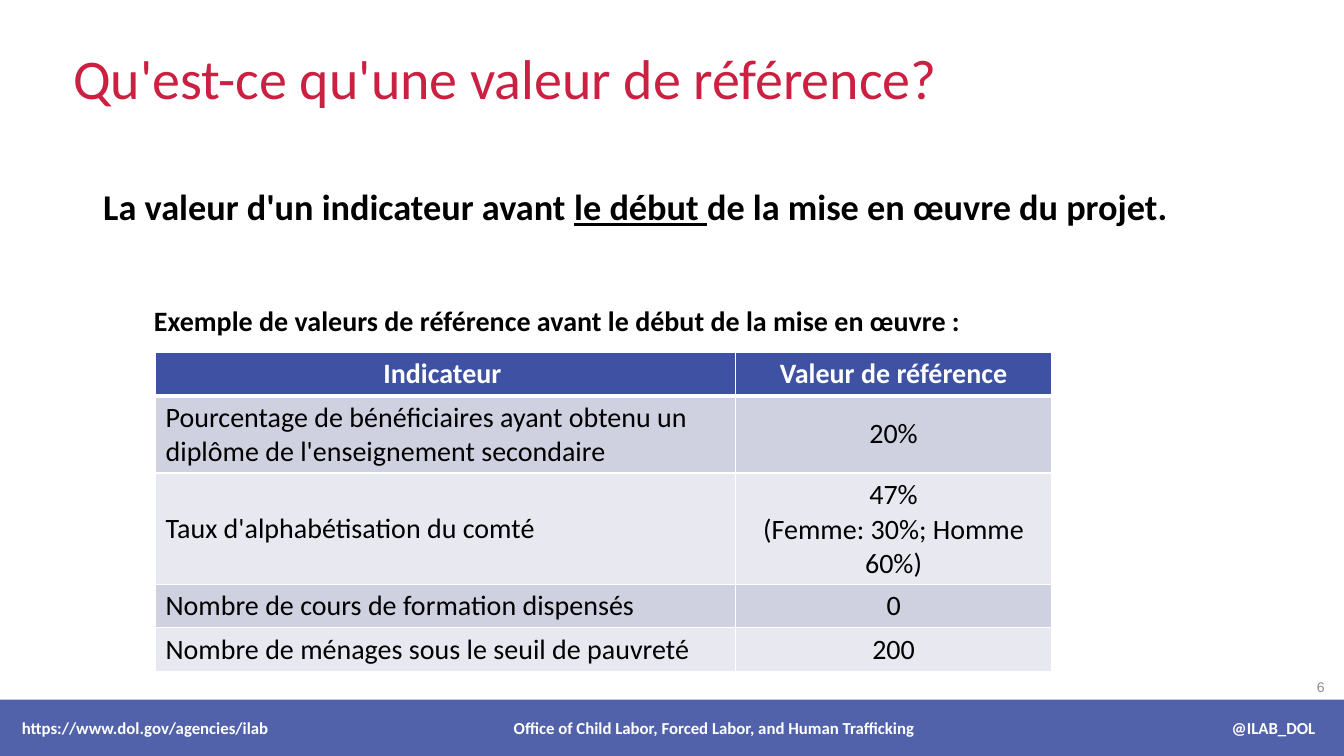
from lxml.etree import SubElement
from pptx import Presentation
from pptx.dml.color import RGBColor
from pptx.enum.shapes import MSO_SHAPE
from pptx.enum.text import MSO_ANCHOR, PP_ALIGN
from pptx.oxml import parse_xml
from pptx.oxml.ns import nsdecls, qn
from pptx.util import Cm, Pt

COLOURS = {
    "title": "CB2042", "text": "000000", "white": "FFFFFF", "blue": "3F51A2",
    "band_dark": "CFD0E0", "band_light": "E8E9F0", "number": "8C8C8C",
}
TITLE = "Qu'est-ce qu'une valeur de référence?"
# (text, underlined)
DEFINITION = [
    ("La valeur d'un indicateur avant ", False),
    ("le début ", True),
    ("de la mise en œuvre du projet.", False),
]
CAPTION = "Exemple de valeurs de référence avant le début de la mise en œuvre :"
PAGE_NUMBER = "6"
TABLE_ROWS = [
    ("Indicateur ", "Valeur de référence"),
    ("Pourcentage de bénéficiaires ayant obtenu un diplôme de l'enseignement secondaire", "20%"),
    ("Taux d'alphabétisation du comté", "47%\n(Femme: 30%; Homme 60%)"),
    ("Nombre de cours de formation dispensés", "0"),
    ("Nombre de ménages sous le seuil de pauvreté", "200"),
]
COLUMN_WIDTHS = (14.62, 7.96)
ROW_HEIGHTS = (1.1, 1.93, 2.8, 1.1, 1.1)
FOOTER_TOP, FOOTER_HEIGHT = 17.63, 1.42
# (text, left, width, alignment)
FOOTER = [
    ("https://www.dol.gov/agencies/ilab", 0.3, 8, PP_ALIGN.LEFT),
    ("Office of Child Labor, Forced Labor, and Human Trafficking", 11.5, 13, PP_ALIGN.CENTER),
    ("@ILAB_DOL", 28.4, 5, PP_ALIGN.RIGHT),
]


def colour(name):
    return RGBColor.from_string(COLOURS[name])


def style(frame, size, shade, bold=False, align=None, font="Calibri"):
    for para in frame.paragraphs:
        para.alignment = align
        for span in para.runs:
            span.font.name = font
            span.font.size = Pt(size)
            span.font.bold = bold
            span.font.color.rgb = colour(shade)


def add_text(page, area, text, anchor=MSO_ANCHOR.TOP, **look):
    """Area is left, top, width, height in centimetres."""
    frame = page.shapes.add_textbox(*map(Cm, area)).text_frame
    frame.word_wrap = True
    frame.vertical_anchor = anchor
    frame.text = text
    style(frame, **look)
    return frame


def add_definition(page):
    frame = add_text(page, (1.32, 4.65, 29.39, 2.16), "", size=25.9, shade="text")
    para = frame.paragraphs[0]
    para.line_spacing = 0.9
    for text, underlined in DEFINITION:
        span = para.add_run()
        span.text = text
        span.font.underline = underlined
    style(frame, 25.9, "text", bold=True, align=PP_ALIGN.CENTER)


def set_borders(cell, is_header):
    properties = cell._tc.get_or_add_tcPr()
    for position, side in enumerate("LRTB"):
        points = 3 if is_header and side == "B" else 1
        line = parse_xml(
            f'<a:ln{side} {nsdecls("a")} w="{Pt(points)}"><a:solidFill>'
            f'<a:srgbClr val="{COLOURS["white"]}"/></a:solidFill></a:ln{side}>')
        properties.insert(position, line)


def add_baseline_table(page):
    table = page.shapes.add_table(
        len(TABLE_ROWS), len(COLUMN_WIDTHS), Cm(3.92), Cm(8.87),
        Cm(sum(COLUMN_WIDTHS)), Cm(sum(ROW_HEIGHTS))).table
    for column, width in zip(table.columns, COLUMN_WIDTHS):
        column.width = Cm(width)
    for row_index, texts in enumerate(TABLE_ROWS):
        table.rows[row_index].height = Cm(ROW_HEIGHTS[row_index])
        is_header = row_index == 0
        band = "band_dark" if row_index % 2 else "band_light"
        for column_index, text in enumerate(texts):
            cell = table.cell(row_index, column_index)
            cell.text_frame.text = text
            cell.vertical_anchor = MSO_ANCHOR.TOP if is_header else MSO_ANCHOR.MIDDLE
            cell.fill.solid()
            cell.fill.fore_color.rgb = colour("blue" if is_header else band)
            centred = is_header or column_index == 1
            style(cell.text_frame, 20, "white" if is_header else "text", bold=is_header,
                  align=PP_ALIGN.CENTER if centred else PP_ALIGN.LEFT)
            set_borders(cell, is_header)


def add_footer(page, width):
    bar = page.shapes.add_shape(
        MSO_SHAPE.RECTANGLE, 0, Cm(FOOTER_TOP), width, Cm(FOOTER_HEIGHT))
    bar.shadow.inherit = False
    bar.line.fill.background()
    bar.fill.solid()
    bar.fill.fore_color.rgb = colour("blue")
    shade = bar._element.spPr.find(qn("a:solidFill"))[0]
    SubElement(shade, qn("a:alpha")).set("val", "90000")
    for text, left, text_width, align in FOOTER:
        add_text(page, (left, FOOTER_TOP, text_width, FOOTER_HEIGHT), text,
                 MSO_ANCHOR.MIDDLE, size=12, shade="white", bold=True, align=align)


def main():
    deck = Presentation()
    deck.slide_width, deck.slide_height = Cm(33.87), Cm(19.05)
    page = deck.slides.add_slide(deck.slide_layouts[6])
    add_text(page, (32.94, 16.81, 1.24, 1.02), PAGE_NUMBER, MSO_ANCHOR.MIDDLE,
             size=10, shade="number", font="Arial")
    title = add_text(page, (1.6, 0.28, 28.55, 2.67), TITLE, MSO_ANCHOR.BOTTOM,
                     size=40, shade="title")
    title.paragraphs[0].line_spacing = 0.9
    add_definition(page)
    add_text(page, (3.63, 7.52, 23.83, 1.12), CAPTION, size=20, shade="text", bold=True)
    add_baseline_table(page)
    add_footer(page, deck.slide_width)
    deck.save("out.pptx")


if __name__ == "__main__":
    main()
